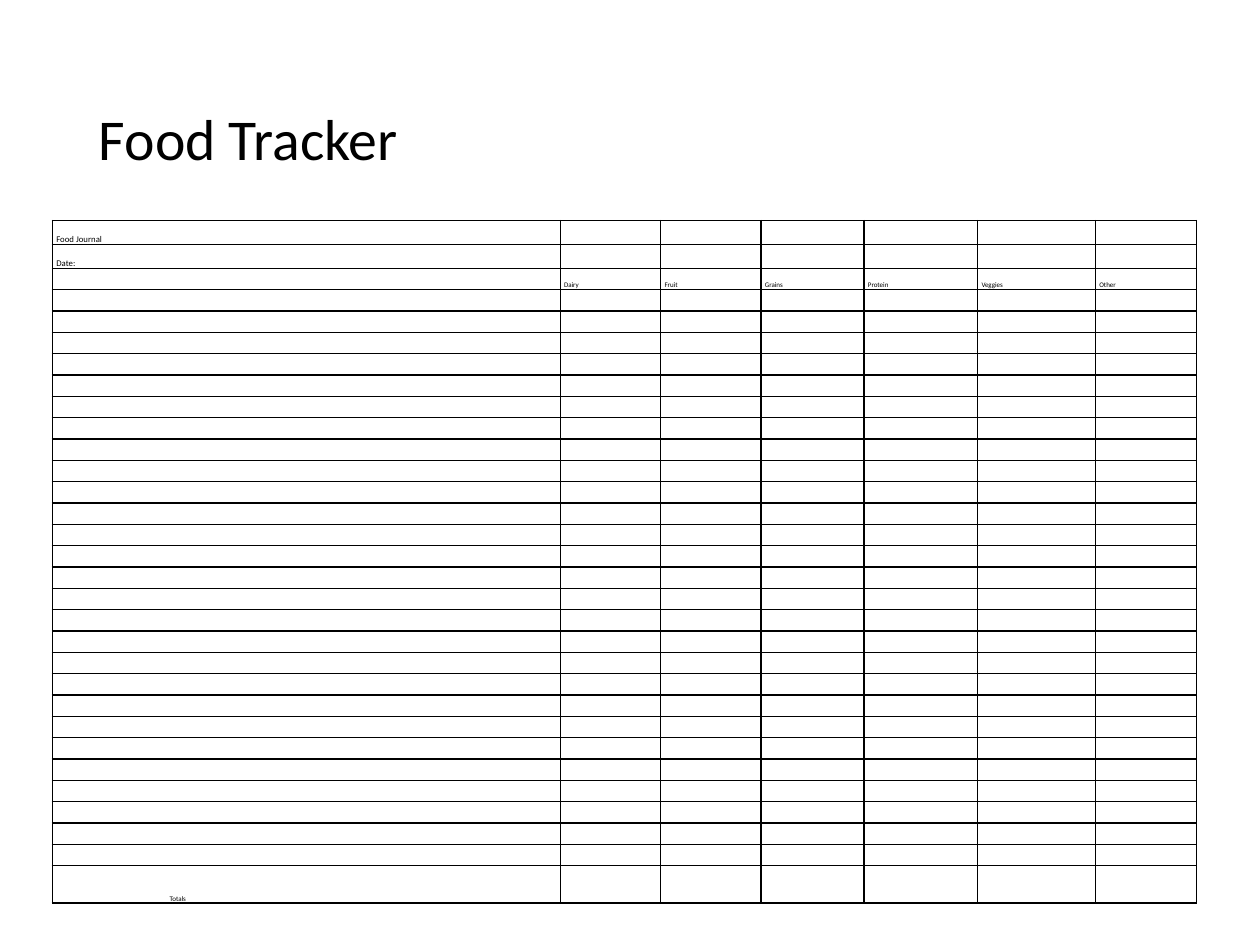
from dataclasses import dataclass

from lxml.etree import SubElement
from pptx import Presentation
from pptx.dml.color import RGBColor
from pptx.enum.text import MSO_ANCHOR
from pptx.oxml.ns import qn
from pptx.util import Pt


@dataclass(frozen=True)
class Theme:
    font: str = "Calibri"
    ink: str = "000000"
    title: float = 33
    heading: float = 5
    label: float = 4
    rule: float = 1


THEME = Theme()

TITLE = "Food Tracker"
HEADINGS = ["Food Journal", "Date:"]
FOOD_GROUPS = ["Dairy", "Fruit", "Grains", "Protein", "Veggies", "Other"]
TOTALS = "Totals"
ENTRY_ROWS = 27

COLUMN_WIDTHS = [290.2, 57.4, 57.4, 58.9, 64.9, 67.4, 57.6]
ROW_HEIGHTS = [13.7] * len(HEADINGS) + [12.2] * (1 + ENTRY_ROWS) + [21.4]
TABLE_LEFT, TABLE_TOP = 30, 126
CELL_INSET = 2.2
TOTALS_INSET = 67


def style_font(font, size):
    font.name = THEME.font
    font.size = Pt(size)
    font.color.rgb = RGBColor.from_string(THEME.ink)


def add_borders(cell):
    """Rule all four sides; borders must come before the fill in the XML."""
    properties = cell._tc.get_or_add_tcPr()
    for side in ("a:lnL", "a:lnR", "a:lnT", "a:lnB"):
        line = SubElement(properties, qn(side), w=str(Pt(THEME.rule)))
        fill = SubElement(line, qn("a:solidFill"))
        SubElement(fill, qn("a:srgbClr"), val=THEME.ink)


def fill_cell(cell, text, size, left_inset=CELL_INSET):
    cell.margin_left, cell.margin_right = Pt(left_inset), Pt(CELL_INSET)
    cell.margin_top = cell.margin_bottom = 0
    cell.vertical_anchor = MSO_ANCHOR.BOTTOM
    add_borders(cell)
    cell.fill.background()
    paragraph = cell.text_frame.paragraphs[0]
    paragraph.text = text
    style_font(paragraph.font, size)
    if not text:  # keeps an empty row from growing to the default type size
        SubElement(paragraph._p, qn("a:endParaRPr"), sz=str(int(size * 100)))


def add_title(page):
    box = page.shapes.add_textbox(Pt(49.5), Pt(28.8), Pt(621), Pt(104.4))
    frame = box.text_frame
    frame.word_wrap = True
    frame.vertical_anchor = MSO_ANCHOR.MIDDLE
    paragraph = frame.paragraphs[0]
    paragraph.text = TITLE
    paragraph.line_spacing = 0.9
    style_font(paragraph.font, THEME.title)


def add_journal(page):
    blanks = [""] * len(FOOD_GROUPS)
    rows = [[heading] + blanks for heading in HEADINGS]
    rows.append([""] + FOOD_GROUPS)
    rows += [[""] + blanks for _ in range(ENTRY_ROWS)]
    rows.append([TOTALS] + blanks)

    table = page.shapes.add_table(
        len(rows), len(COLUMN_WIDTHS), Pt(TABLE_LEFT), Pt(TABLE_TOP),
        Pt(sum(COLUMN_WIDTHS)), Pt(sum(ROW_HEIGHTS))).table
    table.first_row = table.horz_banding = False
    for column, width in zip(table.columns, COLUMN_WIDTHS):
        column.width = Pt(width)
    for row, height, texts in zip(table.rows, ROW_HEIGHTS, rows):
        row.height = Pt(height)
        for cell, text in zip(row.cells, texts):
            size = THEME.heading if text in HEADINGS else THEME.label
            inset = TOTALS_INSET if text == TOTALS else CELL_INSET
            fill_cell(cell, text, size, inset)


def main():
    deck = Presentation()
    deck.slide_width, deck.slide_height = Pt(720), Pt(540)
    page = deck.slides.add_slide(deck.slide_layouts[6])
    add_title(page)
    add_journal(page)
    deck.save("out.pptx")


if __name__ == "__main__":
    main()
